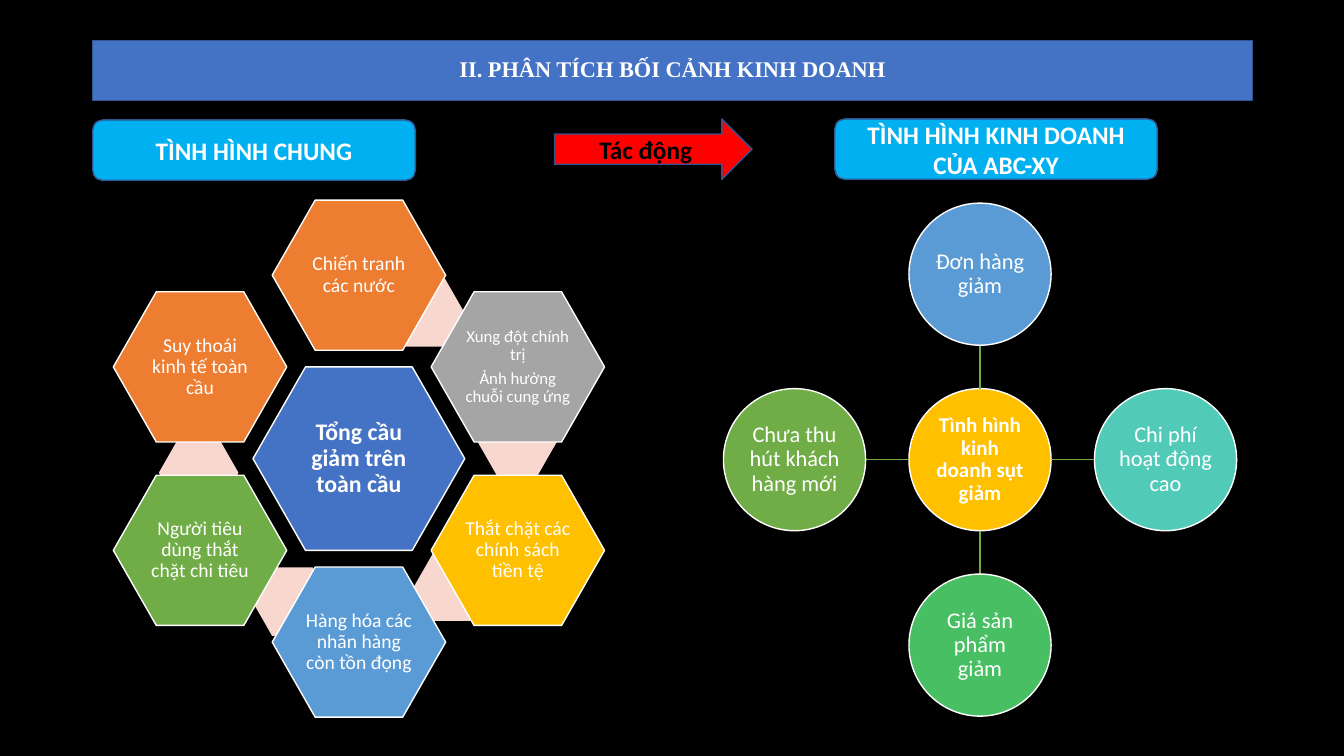
from dataclasses import dataclass
from math import cos, radians, sin

from lxml import etree
from pptx import Presentation
from pptx.dml.color import RGBColor
from pptx.enum.shapes import MSO_CONNECTOR, MSO_SHAPE
from pptx.enum.text import MSO_ANCHOR, MSO_AUTO_SIZE, PP_ALIGN
from pptx.oxml.ns import qn
from pptx.util import Inches, Pt

HEX, OVAL = MSO_SHAPE.HEXAGON, MSO_SHAPE.OVAL
ROUND, ARROW = MSO_SHAPE.ROUNDED_RECTANGLE, MSO_SHAPE.RIGHT_ARROW
STRAIGHT = MSO_CONNECTOR.STRAIGHT
MIDDLE, CENTER = MSO_ANCHOR.MIDDLE, PP_ALIGN.CENTER
NO_FIT = MSO_AUTO_SIZE.NONE


@dataclass(frozen=True)
class Theme:
    """Colours, fonts and type sizes of the slide."""
    black: str = "000000"
    white: str = "FFFFFF"
    blue: str = "4472C4"
    edge: str = "325491"
    cyan: str = "00B0F0"
    red: str = "FF0000"
    orange: str = "ED7D31"
    gray: str = "A5A5A5"
    gold: str = "FFC000"
    sky: str = "5B9BD5"
    green: str = "70AD47"
    teal: str = "52CAB8"
    mint: str = "49BF64"
    peach: str = "F8D7CE"
    body: str = "Calibri"
    serif: str = "Times New Roman"
    title: int = 16
    head: int = 18
    core: int = 17
    cell: int = 14
    small: int = 12
    hub: int = 15
    node: int = 16


T = Theme()
RING = (
    (-90, T.orange, T.cell, ["Chiến tranh các nước"]),
    (-30, T.gray, T.small, ["Xung đột chính trị", "Ảnh hưởng chuỗi cung ứng"]),
    (30, T.gold, T.cell, ["Thắt chặt các chính sách tiền tệ"]),
    (90, T.sky, T.cell, ["Hàng hóa các nhãn hàng còn tồn đọng"]),
    (150, T.green, T.cell, ["Người tiêu dùng thắt chặt chi tiêu"]),
    (210, T.orange, T.cell, ["Suy thoái kinh tế toàn cầu"]),
)
LINKS = ((4.21, 3.1), (5.13, 4.38), (4.5, 5.82), (2.9, 5.97), (1.97, 4.69))
NODES = (
    (0, -1, T.sky, "Đơn hàng giảm"),
    (1, 0, T.teal, "Chi phí hoạt động cao"),
    (0, 1, T.mint, "Giá sản phẩm giảm"),
    (-1, 0, T.green, "Chưa thu hút khách hàng mới"),
)


def rgb(code):
    """Turn a hex code into a colour."""
    return RGBColor.from_string(code)


def paint(shape, fill, line=None):
    """Set the fill and outline of a shape."""
    shape.shadow.inherit = False
    shape.fill.solid()
    shape.fill.fore_color.rgb = rgb(fill)
    if line:
        shape.line.color.rgb = rgb(line)
        shape.line.width = Pt(1)
    else:
        shape.line.fill.background()


def write(shape, lines, size, bold=False, color=T.white, font=T.body,
          inset=None, pitch=None, after=0):
    """Write centred paragraphs into a shape."""
    frame = shape.text_frame
    frame.word_wrap = True
    frame.auto_size = NO_FIT
    frame.vertical_anchor = MIDDLE
    if inset is not None:
        frame.margin_left = frame.margin_right = Inches(inset)
        frame.margin_top = frame.margin_bottom = Inches(inset)
    for i, text in enumerate(lines):
        para = frame.add_paragraph() if i else frame.paragraphs[0]
        para.alignment = CENTER
        para.space_before = Pt(0)
        para.space_after = Pt(after * size)
        if pitch:
            para.line_spacing = pitch
        run = para.add_run()
        run.text = text
        run.font.name = font
        run.font.size = Pt(size)
        run.font.bold = bold
        run.font.color.rgb = rgb(color)


def add_mid(slide, kind, x, y, w, h, fill, line=None):
    """Add a painted shape around a centre point."""
    shape = slide.shapes.add_shape(
        kind, Inches(x - w / 2), Inches(y - h / 2), Inches(w), Inches(h))
    paint(shape, fill, line)
    if kind == HEX:
        shape.adjustments[0] = 0.286
    return shape


def add_cell(slide, kind, x, y, w, h, fill, lines, size, bold=False):
    """Add a diagram cell with its text."""
    shape = add_mid(slide, kind, x, y, w, h, fill, T.white)
    write(shape, lines, size, bold, inset=0.02, pitch=0.9, after=0.35)


def add_spoke(slide, x1, y1, x2, y2):
    """Add a thin line between two points."""
    spoke = slide.shapes.add_connector(
        STRAIGHT, Inches(x1), Inches(y1), Inches(x2), Inches(y2))
    spoke.line.color.rgb = rgb(T.green)
    spoke.line.width = Pt(1)
    etree.SubElement(spoke._element.spPr, qn("a:effectLst"))


def add_title(slide, text):
    """Format the title as a banner."""
    title = slide.shapes.title
    title.left, title.top = Inches(0.92), Inches(0.4)
    title.width, title.height = Inches(11.5), Inches(0.6)
    title.fill.solid()
    title.fill.fore_color.rgb = rgb(T.blue)
    title.line.color.rgb = rgb(T.edge)
    title.line.width = Pt(1)
    write(title, [text], T.title, True, font=T.serif, pitch=0.9)


def add_head(slide, kind, x, y, w, fill, text, color=T.white):
    """Add a heading shape below the banner."""
    shape = add_mid(slide, kind, x, y, w, 0.6, fill, T.edge)
    write(shape, [text], T.head, True, color)


def add_ring(slide, x, y, reach):
    """Draw the hexagon ring around its core."""
    add_cell(slide, HEX, x, y, 2.1, 1.82, T.blue,
             ["Tổng cầu giảm trên toàn cầu"], T.core, True)
    for left, top in LINKS:
        add_mid(slide, HEX, left, top, 0.79, 0.68, T.peach)
    for angle, fill, size, lines in RING:
        turn = radians(angle)
        add_cell(slide, HEX, x + reach * cos(turn), y + reach * sin(turn),
                 1.72, 1.49, fill, lines, size)


def add_hub(slide, x, y, step, size):
    """Draw the hub, its spokes and its nodes."""
    add_cell(slide, OVAL, x, y, size, size, T.gold,
             ["Tình hình kinh doanh sụt giảm"], T.hub, True)
    near, far = size / 2, step - size / 2
    for dx, dy, fill, text in NODES:
        add_spoke(slide, x + dx * near, y + dy * near,
                  x + dx * far, y + dy * far)
        add_cell(slide, OVAL, x + dx * step, y + dy * step, size, size,
                 fill, [text], T.node)


def main():
    """Build and save the slide."""
    deck = Presentation()
    deck.slide_width, deck.slide_height = Inches(13.33), Inches(7.5)
    slide = deck.slides.add_slide(deck.slide_layouts[5])
    slide.background.fill.solid()
    slide.background.fill.fore_color.rgb = rgb(T.black)
    add_title(slide, "II. PHÂN TÍCH BỐI CẢNH KINH DOANH")
    add_ring(slide, 3.56, 4.55, 1.82)
    add_hub(slide, 9.72, 4.56, 1.84, 1.41)
    add_head(slide, ROUND, 2.52, 1.49, 3.2, T.cyan, "TÌNH HÌNH CHUNG")
    add_head(slide, ROUND, 9.88, 1.48, 3.2, T.cyan,
             "TÌNH HÌNH KINH DOANH CỦA ABC-XY")
    add_head(slide, ARROW, 6.48, 1.48, 1.96, T.red, "Tác động", T.black)
    deck.save("out.pptx")


if __name__ == "__main__":
    main()
